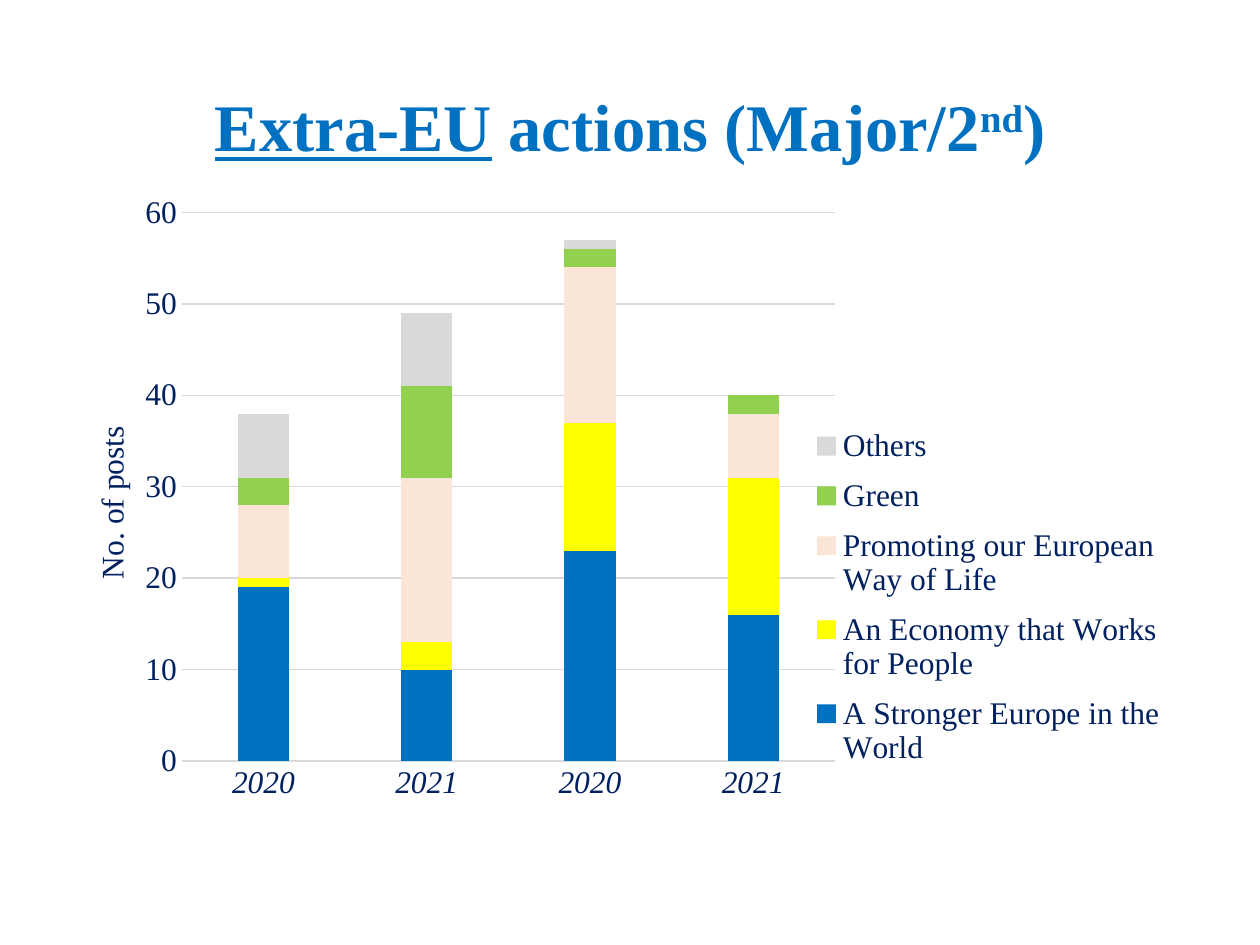
import pptx
import pptx.chart.data
import pptx.dml.color
import pptx.enum.chart
import pptx.enum.text
import pptx.oxml
import pptx.oxml.ns
import pptx.util
from pptx.util import Cm

FONT = "Times New Roman"
BLUE, NAVY, GREY = "0070C0", "002060", "D9D9D9"
YEARS = ["2020", "2021", "2020", "2021"]
PRIORITIES = [
    ("A Stronger Europe in the World", (19, 10, 23, 16), BLUE),
    ("An Economy that Works for People", (1, 3, 14, 15), "FFFF00"),
    ("Promoting our European Way of Life", (8, 18, 17, 7), "FBE5D6"),
    ("Green", (3, 10, 2, 2), "92D050"),
    ("Others", (7, 8, 1, 0), GREY),
]


def colour(hex_value):
    """Return the RGB colour of a hex string."""
    return pptx.dml.color.RGBColor.from_string(hex_value)


def style_font(font, size, hex_value, bold=False, italic=False):
    """Set the face, size, colour and weight of a font."""
    font.name, font.size = FONT, pptx.util.Pt(size)
    font.bold, font.italic = bold, italic
    font.color.rgb = colour(hex_value)


def style_line(line):
    """Make a line thin and grey."""
    line.color.rgb = colour(GREY)
    line.width = pptx.util.Pt(0.75)


def set_layout(parent, index, target=None, **fractions):
    """Place a chart part by fractions of the chart area."""
    for old in parent.findall(pptx.oxml.ns.qn("c:layout")):
        parent.remove(old)
    settings = [("layoutTarget", target)] if target else []
    settings += [(axis + "Mode", "edge") for axis in "xy"]
    settings += fractions.items()
    parts = "".join(f'<c:{tag} val="{value}"/>' for tag, value in settings)
    parent.insert(index, pptx.oxml.parse_xml(
        f'<c:layout {pptx.oxml.ns.nsdecls("c")}>'
        f"<c:manualLayout>{parts}</c:manualLayout></c:layout>"))


def add_heading(slide, left, top, width, height):
    """Write the slide heading in the given box."""
    frame = slide.shapes.add_textbox(left, top, width, height).text_frame
    frame.word_wrap = True
    frame.vertical_anchor = pptx.enum.text.MSO_ANCHOR.MIDDLE
    heading = frame.paragraphs[0]
    heading.alignment = pptx.enum.text.PP_ALIGN.CENTER
    heading.line_spacing = 0.9
    style_font(heading.font, 38, BLUE, bold=True)
    scope, subject, ordinal, closing = [heading.add_run() for _ in range(4)]
    scope.text, subject.text = "Extra-EU", " actions (Major/2"
    ordinal.text, closing.text = "nd", ")"
    scope.font.underline = True
    ordinal._r.get_or_add_rPr().set("baseline", "30000")


def style_axes(chart):
    """Format the year axis and the post count axis."""
    years, posts = chart.category_axis, chart.value_axis
    for axis in (years, posts):
        axis.major_tick_mark = pptx.enum.chart.XL_TICK_MARK.NONE
        axis.minor_tick_mark = pptx.enum.chart.XL_TICK_MARK.NONE
        style_font(axis.tick_labels.font, 18, NAVY, italic=axis is years)
    style_line(years.format.line)
    posts.format.line.fill.background()
    posts.minimum_scale, posts.maximum_scale, posts.major_unit = 0, 60, 10
    style_line(posts.major_gridlines.format.line)
    title = posts.axis_title
    title.text_frame.text = "No. of posts"
    style_font(title.text_frame.paragraphs[0].font, 18, NAVY)
    direction = title.text_frame._txBody.bodyPr
    direction.set("rot", "-5400000")
    direction.set("vert", "horz")
    set_layout(title._element, 1, x=0.03, y=0.34)


def add_posts_chart(slide, left, top, width, height):
    """Draw the stacked post counts with their legend."""
    data = pptx.chart.data.CategoryChartData()
    data.categories = YEARS
    for name, counts, _ in PRIORITIES:
        data.add_series(name, counts)
    chart = slide.shapes.add_chart(
        pptx.enum.chart.XL_CHART_TYPE.COLUMN_STACKED,
        left, top, width, height, data).chart
    style_font(chart.font, 18, NAVY)
    chart.has_title = False
    columns = chart.plots[0]
    columns.gap_width, columns.overlap = 219, 100
    columns.vary_by_categories = False
    for series, (_, _, fill) in zip(columns.series, PRIORITIES):
        series.format.fill.solid()
        series.format.fill.fore_color.rgb = colour(fill)
    style_axes(chart)
    chart.has_legend = True
    legend = chart.legend
    legend.position = pptx.enum.chart.XL_LEGEND_POSITION.RIGHT
    legend.include_in_layout = False
    style_font(legend.font, 18, NAVY)
    set_layout(legend._element, 1, x=0.67, y=0.33, w=0.33, h=0.52)
    set_layout(chart._chartSpace.chart.plotArea, 0, "inner",
               x=0.115, y=0.046, w=0.583, h=0.776)


def main():
    """Build and save the slide."""
    deck = pptx.Presentation()
    deck.slide_width, deck.slide_height = Cm(25.4), Cm(19.05)
    slide = deck.slides.add_slide(deck.slide_layouts[6])
    add_heading(slide, Cm(1.75), Cm(1.63), Cm(21.9), Cm(2))
    add_posts_chart(slide, Cm(1.07), Cm(3.63), Cm(22.58), Cm(14.25))
    deck.save("out.pptx")


if __name__ == "__main__":
    main()
